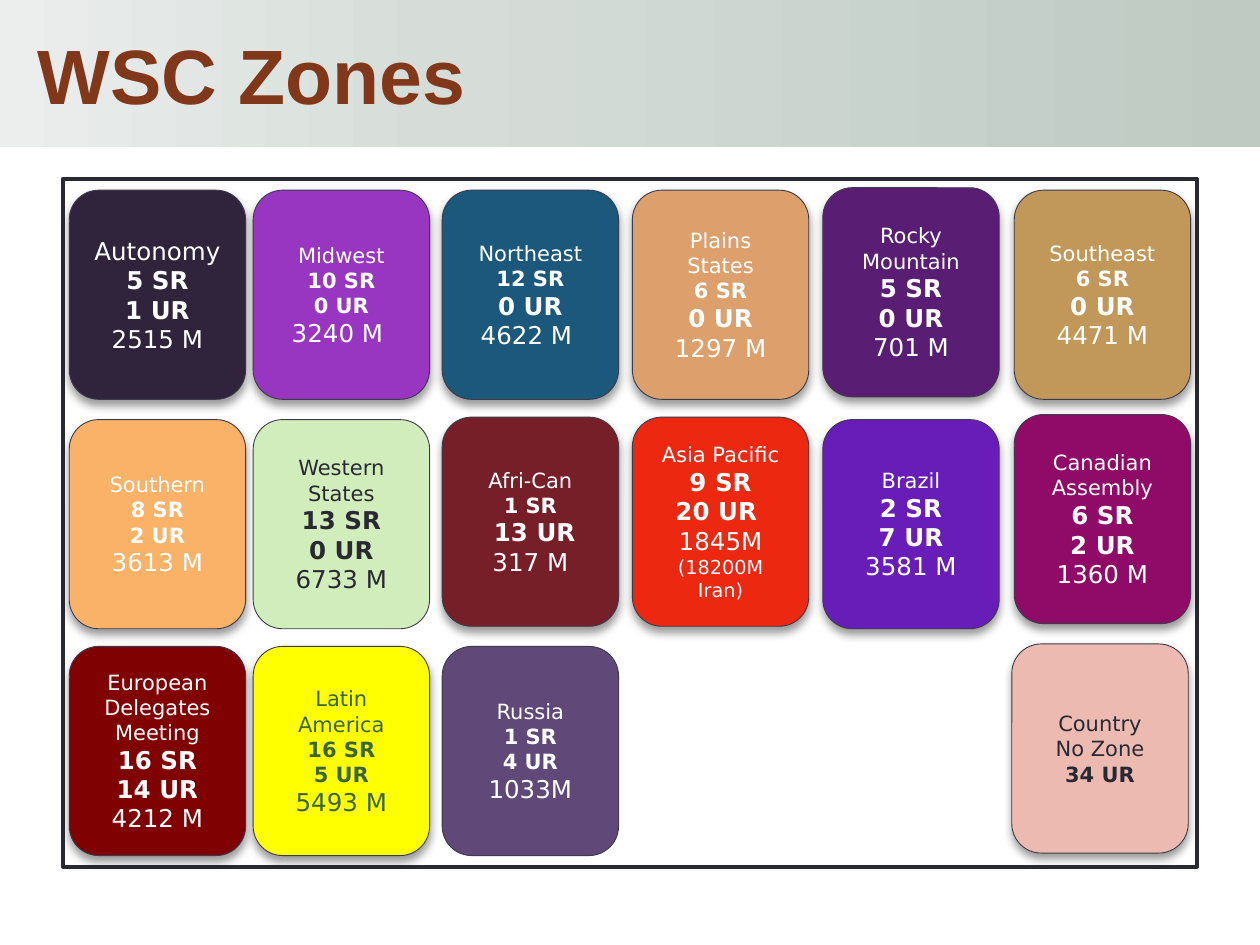
import copy
from dataclasses import dataclass

import lxml.etree
import pptx
import pptx.dml.color
import pptx.enum.shapes
import pptx.enum.text
import pptx.oxml
import pptx.oxml.ns
import pptx.util

Pt = pptx.util.Pt
RGB = pptx.dml.color.RGBColor
Shape = pptx.enum.shapes.MSO_SHAPE
Align = pptx.enum.text.PP_ALIGN
Anchor = pptx.enum.text.MSO_ANCHOR

WHITE = RGB(0xFF, 0xFF, 0xFF)
DARK = RGB(0x29, 0x29, 0x34)
GREEN = RGB(0x3B, 0x64, 0x32)
EDGE = RGB(0x3B, 0x3B, 0x4B)
RUST = RGB(0x81, 0x38, 0x1A)
BAND = [(0, RGB(0xBF, 0xCA, 0xC3)), (0.65, RGB(0xD6, 0xDD, 0xD9)),
        (1, RGB(0xEB, 0xEE, 0xEC))]
PLUM = RGB(0x30, 0x24, 0x3C)
VIOLET = RGB(0x98, 0x36, 0xC2)
BLUE = RGB(0x1B, 0x58, 0x7C)
TAN = RGB(0xDD, 0xA0, 0x6D)
PURPLE = RGB(0x59, 0x1E, 0x74)
GOLD = RGB(0xC1, 0x98, 0x59)
ORANGE = RGB(0xF9, 0xB2, 0x68)
MINT = RGB(0xD1, 0xED, 0xBB)
WINE = RGB(0x77, 0x1F, 0x28)
RED = RGB(0xED, 0x28, 0x11)
INDIGO = RGB(0x69, 0x1D, 0xB8)
BERRY = RGB(0x90, 0x0B, 0x67)
MAROON = RGB(0x7F, 0x01, 0x01)
YELLOW = RGB(0xFF, 0xFF, 0x00)
MAUVE = RGB(0x60, 0x48, 0x78)
PINK = RGB(0xED, 0xBA, 0xB1)

COLS = [39.6, 144.7, 252.7, 361.4, 470.2, 579.6]
ROWS = [108.7, 239.8, 369.4]
WIDE, HIGH = 100.8, 119.5
SHADOW = (
    '<a:effectLst xmlns:a="http://schemas.openxmlformats.org/drawingml/2006/main">'
    '<a:outerShdw blurRad="66040" dist="38100" dir="5400000" rotWithShape="0">'
    '<a:srgbClr val="000000"><a:alpha val="40000"/></a:srgbClr>'
    '</a:outerShdw></a:effectLst>'
)


@dataclass
class Zone:
    """One card: its grid cell, its lines and the point size of each line."""
    row: int
    col: int
    fill: RGB
    text: str
    sizes: tuple[int, ...]
    ink: RGB = WHITE
    lift: float = 0
    shift: float = 0
    cast: bool = True


ZONES = [
    Zone(0, 0, PLUM, "Autonomy|5 SR|1 UR|2515 M", (14, 14, 14, 14)),
    Zone(0, 1, VIOLET, "Midwest|10 SR|0 UR|3240 M ", (12, 12, 12, 14)),
    Zone(0, 2, BLUE, "Northeast|12 SR|0 UR|4622 M ", (12, 12, 14, 14)),
    Zone(0, 3, TAN, "Plains States|6 SR|0 UR|1297 M", (12, 12, 14, 14)),
    Zone(0, 4, PURPLE, "Rocky Mountain|5 SR|0 UR|701 M", (12, 14, 14, 14), lift=1.4),
    Zone(0, 5, GOLD, "Southeast|6 SR|0 UR|4471 M", (12, 12, 14, 14)),
    Zone(1, 0, ORANGE, "Southern|8 SR|2 UR|3613 M", (12, 12, 12, 14)),
    Zone(1, 1, MINT, "Western States|13 SR|0 UR|6733 M", (12, 14, 14, 14),
         ink=DARK, cast=False),
    Zone(1, 2, WINE, "Afri-Can|1 SR| 13 UR|317 M", (12, 12, 14, 14), lift=1.4),
    Zone(1, 3, RED, "Asia Pacific|9 SR|20 UR |1845M|(18200M Iran)",
         (12, 14, 14, 14, 11), lift=1.4),
    Zone(1, 4, INDIGO, "Brazil|2 SR|7 UR|3581 M", (12, 14, 14, 14)),
    Zone(1, 5, BERRY, "Canadian Assembly|6 SR|2 UR|1360 M", (12, 14, 14, 14), lift=2.9),
    Zone(2, 0, MAROON, "European|Delegates|Meeting|16 SR|14 UR|4212 M",
         (12, 12, 12, 14, 14, 14)),
    Zone(2, 1, YELLOW, "Latin America|16 SR|5 UR|5493 M", (12, 12, 12, 14), ink=GREEN),
    Zone(2, 2, MAUVE, "Russia|1 SR|4 UR|1033M", (12, 12, 12, 14), cast=False),
    Zone(2, 5, PINK, "Country|No Zone|34 UR", (12, 12, 12),
         ink=DARK, lift=1.4, shift=-1.4),
]


def style(run, face: str, size: float, ink: RGB, bold: bool) -> None:
    font = run.font
    font.name, font.size, font.bold = face, Pt(size), bold
    font.color.rgb = ink


def add_box(slide, kind, x: float, y: float, wide: float, high: float,
            fill: RGB, line: RGB, weight: float):
    box = slide.shapes.add_shape(kind, Pt(x), Pt(y), Pt(wide), Pt(high))
    box.shadow.inherit = False
    box.fill.solid()
    box.fill.fore_color.rgb = fill
    box.line.color.rgb = line
    box.line.width = Pt(weight)
    return box


def add_shade(box) -> None:
    """Swap the empty effect list for a soft drop shadow."""
    props = box.element.spPr
    old = props.find(pptx.oxml.ns.qn("a:effectLst"))
    props.replace(old, pptx.oxml.parse_xml(SHADOW))


def add_zone(slide, zone: Zone) -> None:
    box = add_box(slide, Shape.ROUNDED_RECTANGLE, COLS[zone.col] + zone.shift,
                  ROWS[zone.row] - zone.lift, WIDE, HIGH, zone.fill, EDGE, 0.5)
    if zone.cast:
        add_shade(box)
    frame = box.text_frame
    frame.word_wrap = True
    frame.vertical_anchor = Anchor.MIDDLE
    frame.text = zone.text.replace("|", "\n")
    for para, size in zip(frame.paragraphs, zone.sizes):
        para.alignment = Align.CENTER
        bold = para.text.strip().endswith(("SR", "UR"))
        style(para.runs[0], "DejaVu Sans", size, zone.ink, bold)


def set_title(slide) -> None:
    title = slide.shapes.title
    title.left, title.top, title.width, title.height = Pt(0), Pt(0), Pt(720), Pt(84.2)
    title.fill.gradient()
    title.fill.gradient_angle = 180
    stops = title.element.spPr.find(".//" + pptx.oxml.ns.qn("a:gsLst"))
    stops.append(copy.deepcopy(stops[0]))
    for stop, (place, color) in zip(title.fill.gradient_stops, BAND):
        stop.position = place
        stop.color.rgb = color
    frame = title.text_frame
    frame.text = "WSC Zones"
    frame.word_wrap = True
    frame.auto_size = pptx.enum.text.MSO_AUTO_SIZE.NONE
    frame.vertical_anchor = Anchor.MIDDLE
    frame.margin_left = Pt(21.6)
    para = frame.paragraphs[0]
    para.alignment = Align.LEFT
    style(para.runs[0], "Arial", 44, RUST, True)


def main() -> None:
    deck = pptx.Presentation()
    deck.slide_width, deck.slide_height = Pt(720), Pt(540)
    slide = deck.slides.add_slide(deck.slide_layouts[5])
    set_title(slide)
    add_box(slide, Shape.RECTANGLE, 36, 102.2, 648, 393.1, WHITE, DARK, 2.25)
    for zone in ZONES:
        add_zone(slide, zone)
    deck.save("out.pptx")


if __name__ == "__main__":
    main()
